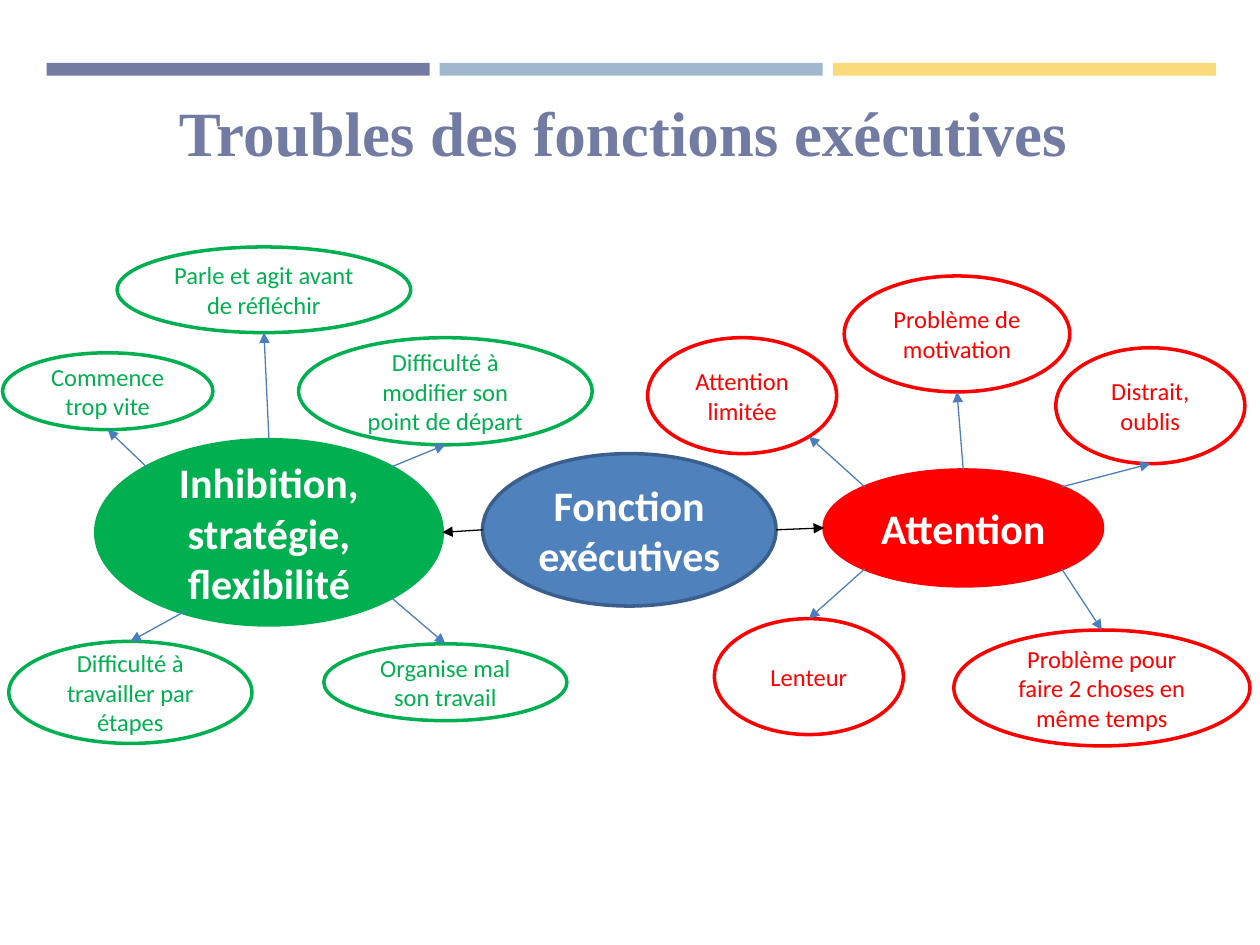
import math
from dataclasses import dataclass

import pptx
import pptx.dml.color
import pptx.enum.shapes
import pptx.enum.text
import pptx.util
from pptx.oxml.ns import qn

Inches, Pt = pptx.util.Inches, pptx.util.Pt
RGB = pptx.dml.color.RGBColor.from_string
SHAPE = pptx.enum.shapes.MSO_SHAPE
ANCHOR = pptx.enum.text.MSO_ANCHOR
ALIGN = pptx.enum.text.PP_ALIGN

DIAGONAL = math.sqrt(0.5)
# Direction from an ellipse's centre to each connection site
SITES = {
    "top": (0, -1), "bottom": (0, 1), "left": (-1, 0), "right": (1, 0),
    "top left": (-DIAGONAL, -DIAGONAL), "top right": (DIAGONAL, -DIAGONAL),
    "bottom left": (-DIAGONAL, DIAGONAL), "bottom right": (DIAGONAL, DIAGONAL),
}


@dataclass(frozen=True)
class Theme:
    slate: str = "727CA3"
    mist: str = "9FB8CD"
    sand: str = "FADA7A"
    red: str = "FF0000"
    green: str = "00B050"
    blue: str = "4F81BD"
    blue_edge: str = "3A5F8C"
    arrow: str = "4B7EBC"
    black: str = "000000"
    white: str = "FFFFFF"
    heading_font: str = "Times New Roman"
    body_font: str = "Calibri"
    title_size: int = 36
    hub_size: int = 24
    leaf_size: int = 14
    outline: float = 2
    arrow_width: float = 0.75


class Deck:
    def __init__(self, prs, theme):
        self.theme = theme
        self.slide = prs.slides.add_slide(prs.slide_layouts[5])

    def apply(self, target, **values):
        for name, value in values.items():
            setattr(target, name, value)

    def add_text(self, sp, text, align, color, **font):
        p = sp.text_frame.paragraphs[0]
        p.alignment = align
        r = p.add_run()
        r.text = text
        self.apply(r.font, **font)
        r.font.color.rgb = RGB(color)

    def title(self, text, box):
        sp = self.slide.shapes.title
        self.apply(sp, **dict(zip(("left", "top", "width", "height"), map(Inches, box))))
        self.apply(sp.text_frame, margin_left=0, margin_top=0, margin_right=0,
                   margin_bottom=0, word_wrap=True, vertical_anchor=ANCHOR.BOTTOM)
        t = self.theme
        self.add_text(sp, text, ALIGN.LEFT, t.slate, name=t.heading_font,
                      size=Pt(t.title_size), bold=True)

    def shape(self, kind, box, fill=None, line=None):
        sp = self.slide.shapes.add_shape(kind, *map(Inches, box))
        sp.shadow.inherit = False
        if fill:
            sp.fill.solid()
            sp.fill.fore_color.rgb = RGB(fill)
        else:
            sp.fill.background()
        if line:
            sp.line.color.rgb = RGB(line)
            sp.line.width = Pt(self.theme.outline)
        else:
            sp.line.fill.background()
        return sp

    def bar(self, box, color):
        self.shape(SHAPE.RECTANGLE, box, color)

    def hub(self, text, box, fill, line):
        sp = self.shape(SHAPE.OVAL, box, fill, line)
        self.label(sp, text, self.theme.white, self.theme.hub_size, True)
        return sp

    def leaf(self, text, box, color):
        sp = self.shape(SHAPE.OVAL, box, None, color)
        self.label(sp, text, color, self.theme.leaf_size, False)
        return sp

    def label(self, sp, text, color, size, bold):
        self.apply(sp.text_frame, word_wrap=True, vertical_anchor=ANCHOR.MIDDLE)
        self.add_text(sp, text, ALIGN.CENTER, color, name=self.theme.body_font,
                      size=Pt(size), bold=bold)

    def site(self, sp, name):
        dx, dy = SITES[name]
        return (round(sp.left + sp.width * (1 + dx) / 2),
                round(sp.top + sp.height * (1 + dy) / 2))

    def arrow(self, start, end, color):
        line = self.slide.shapes.add_connector(
            pptx.enum.shapes.MSO_CONNECTOR.STRAIGHT, *start, *end)
        line.line.color.rgb = RGB(color)
        line.line.width = Pt(self.theme.arrow_width)
        sp_pr = line._element.spPr
        ln = sp_pr.find(qn("a:ln"))
        ln.append(ln.makeelement(qn("a:tailEnd"), {"type": "triangle"}))
        sp_pr.append(sp_pr.makeelement(qn("a:effectLst"), {}))


def main():
    prs = pptx.Presentation()
    prs.slide_width, prs.slide_height = Inches(10), Inches(7.5)
    t = Theme()
    deck = Deck(prs, t)

    bar_width, bar_gap = 3.04, 0.08
    for i, color in enumerate((t.slate, t.mist, t.sand)):
        deck.bar((0.37 + i * (bar_width + bar_gap), 0.5, bar_width, 0.1), color)
    deck.title("Troubles des fonctions exécutives", (1.42, 0.73, 7.15, 0.61))

    attention = deck.hub("Attention", (6.54, 3.73, 2.21, 0.92), t.red, t.red)
    inhibition = deck.hub("Inhibition, stratégie, flexibilité",
                          (0.76, 3.49, 2.75, 1.47), t.green, t.green)
    center = deck.hub("Fonction exécutives", (3.83, 3.6, 2.33, 1.21), t.blue, t.blue_edge)

    # Text, box, site on the hub (or a point in inches), site on the leaf
    branches = [
        (attention, t.red, [
            ("Lenteur", (5.67, 4.91, 1.5, 0.92), "bottom left", "top"),
            ("Problème de motivation", (6.7, 2.19, 1.79, 0.92), "top", "bottom"),
            ("Attention limitée", (5.14, 2.68, 1.5, 0.92), "top left", "bottom right"),
            ("Distrait, oublis", (8.38, 2.76, 1.5, 0.92), "top right", "bottom"),
            ("Problème pour faire 2 choses en même temps", (7.57, 5, 2.35, 0.92),
             "bottom right", "top"),
        ]),
        (inhibition, t.green, [
            ("Commence trop vite", (0.02, 2.8, 1.67, 0.61), "top left", "bottom"),
            ("Parle et agit avant de réfléchir", (0.93, 1.96, 2.33, 0.68), "top", "bottom"),
            ("Difficulté à modifier son point de départ", (2.37, 2.68, 2.33, 0.85),
             "top right", "bottom"),
            ("Organise mal son travail", (2.57, 5.11, 1.93, 0.61), "bottom right", "top"),
            ("Difficulté à travailler par étapes", (0.07, 5.09, 1.93, 0.81),
             (1.49, 4.84), "top"),
        ]),
    ]
    for hub, color, leaves in branches:
        for text, box, origin, target in leaves:
            leaf = deck.leaf(text, box, color)
            start = (deck.site(hub, origin) if origin in SITES
                     else tuple(map(Inches, origin)))
            deck.arrow(start, deck.site(leaf, target), t.arrow)

    for hub, origin, target in ((inhibition, "left", "right"), (attention, "right", "left")):
        deck.arrow(deck.site(center, origin), deck.site(hub, target), t.black)

    prs.save("out.pptx")


if __name__ == "__main__":
    main()
